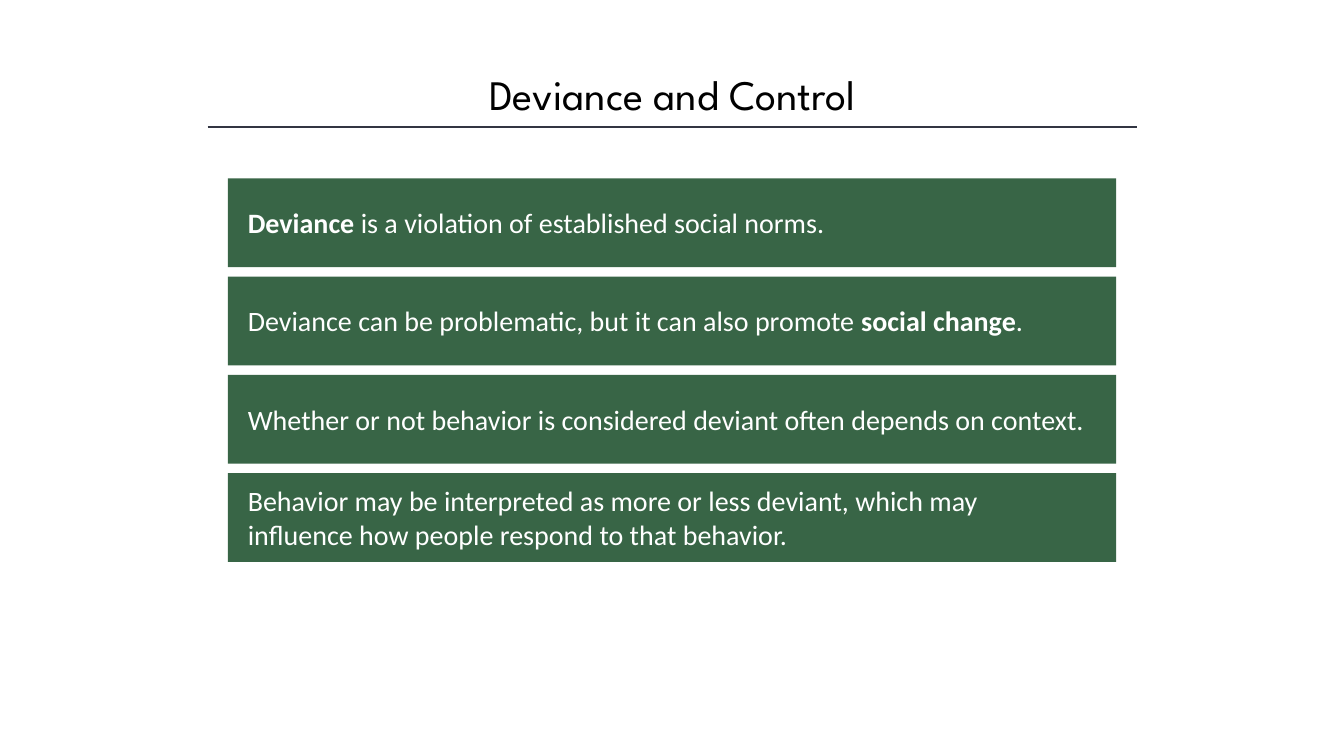
from lxml import etree
from pptx import Presentation
from pptx.dml.color import RGBColor
from pptx.enum import shapes, text
from pptx.oxml import ns
from pptx.util import Inches, Pt

STATEMENTS = [
    (1, [("Deviance ", True), ("is a violation of established social norms.", False)]),
    (1, [("Deviance can be problematic, but it can also promote ", False),
         ("social change", True), (".", False)]),
    (1, [("Whether or not behavior is considered deviant often depends on context.", False)]),
    (2, [("Behavior may be interpreted as more or less deviant, which may influence "
          "how people respond to that behavior.", False)]),
]
LABEL_HEIGHTS = {1: 0.44, 2: 0.77}  # by number of text lines
BAR_LEFT, BAR_TOP, BAR_WIDTH, BAR_HEIGHT = 2.26, 1.77, 8.81, 0.88
BAR_PITCH = 0.975
LABEL_LEFT, LABEL_WIDTH = 2.36, 8.54


def rgb(hex_color):
    return RGBColor.from_string(hex_color)


def write(frame, runs, *, font, size, color, align=text.PP_ALIGN.LEFT):
    """Fill a text frame with one paragraph of (wording, bold) runs."""
    frame.word_wrap = True
    frame.auto_size = text.MSO_AUTO_SIZE.SHAPE_TO_FIT_TEXT
    frame.vertical_anchor = text.MSO_ANCHOR.TOP
    paragraph = frame.paragraphs[0]
    paragraph.alignment = align
    for wording, bold in runs:
        run = paragraph.add_run()
        run.text = wording
        run.font.name = font
        run.font.size = Pt(size)
        run.font.bold = bold
        run.font.color.rgb = rgb(color)


class SlideBuilder:
    GREEN, RULE, BLACK, WHITE = "386546", "323542", "000000", "FFFFFF"
    HEADING_FONT, BODY_FONT = "League Spartan", "Calibri"

    def __init__(self, slide):
        self.slide = slide
        slide.background.fill.solid()
        slide.background.fill.fore_color.rgb = rgb(self.WHITE)

    def title(self, wording, left, top, width, height):
        heading = self.slide.shapes.title
        heading.left, heading.top = Inches(left), Inches(top)
        heading.width, heading.height = Inches(width), Inches(height)
        write(heading.text_frame, [(wording, False)], font=self.HEADING_FONT,
              size=30, color=self.BLACK, align=text.PP_ALIGN.CENTER)

    def rule(self, left, right, y):
        line = self.slide.shapes.add_connector(
            shapes.MSO_CONNECTOR.STRAIGHT, Inches(left), Inches(y), Inches(right), Inches(y))
        line.line.color.rgb = rgb(self.RULE)
        line.line.width = Pt(1)
        etree.SubElement(line._element.spPr, ns.qn("a:effectLst"))

    def block(self, parent, left, top, width, height):
        rect = parent.shapes.add_shape(
            shapes.MSO_SHAPE.RECTANGLE, Inches(left), Inches(top), Inches(width), Inches(height))
        rect.shadow.inherit = False
        rect.fill.solid()
        rect.fill.fore_color.rgb = rgb(self.GREEN)
        rect.line.fill.background()
        return rect

    def statement(self, top, runs, label_height):
        """Draw a bar with its label centred vertically, as one group."""
        group = self.slide.shapes.add_group_shape()
        self.block(group, BAR_LEFT, top, BAR_WIDTH, BAR_HEIGHT)
        label_top = top + (BAR_HEIGHT - label_height) / 2
        label = self.block(group, LABEL_LEFT, label_top, LABEL_WIDTH, label_height)
        write(label.text_frame, runs, font=self.BODY_FONT, size=20, color=self.WHITE)


def main():
    deck = Presentation()
    deck.slide_width, deck.slide_height = Inches(13.33), Inches(7.5)
    builder = SlideBuilder(deck.slides.add_slide(deck.slide_layouts[5]))
    builder.title("Deviance and Control", 1.67, 0.63, 10, 0.61)
    builder.rule(2.06, 11.28, 1.26)
    for row, (line_count, runs) in enumerate(STATEMENTS):
        builder.statement(BAR_TOP + row * BAR_PITCH, runs, LABEL_HEIGHTS[line_count])
    deck.save("out.pptx")


if __name__ == "__main__":
    main()
